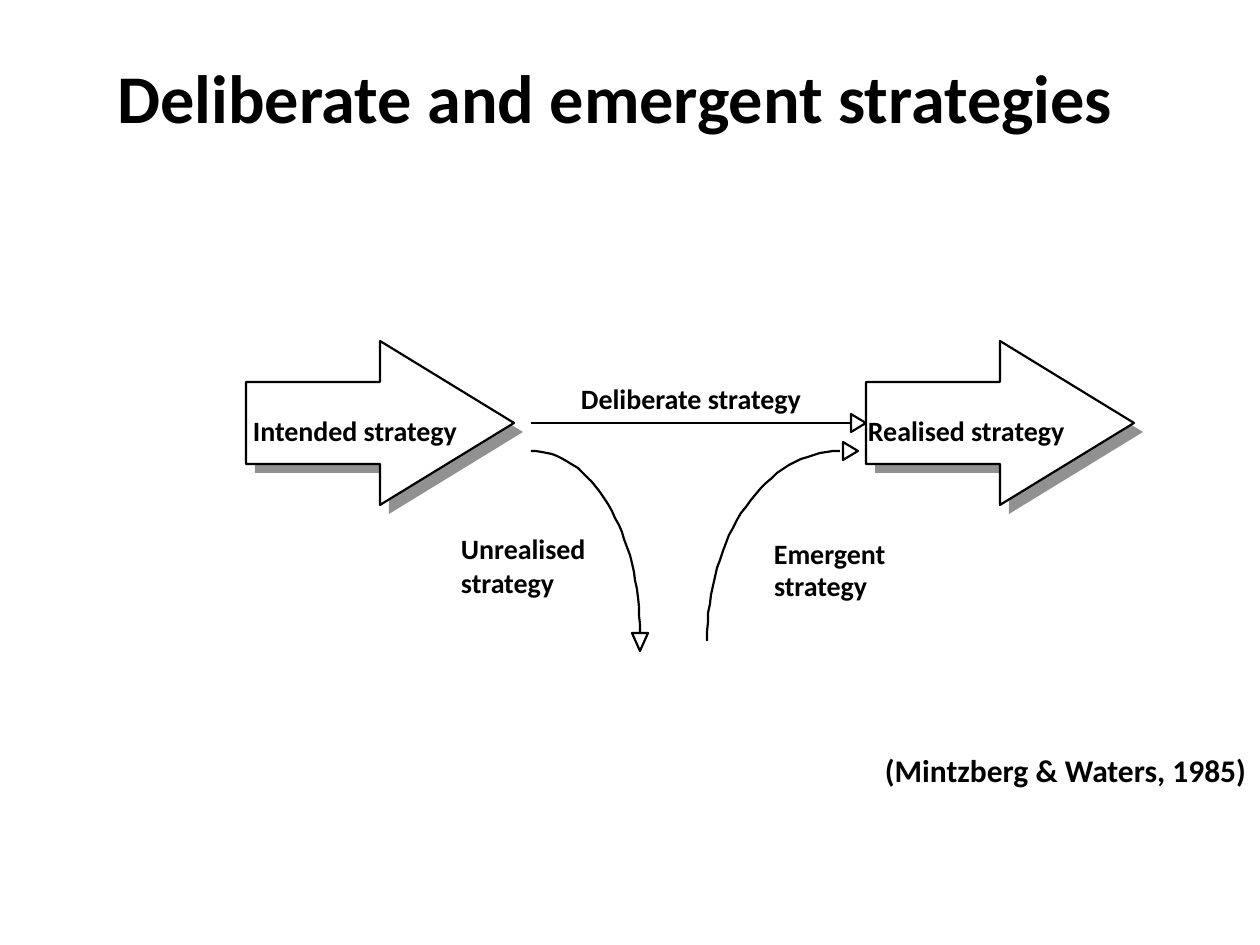
import math
from dataclasses import dataclass

from lxml import etree
from pptx import Presentation
from pptx import util as u
from pptx.dml.color import RGBColor
from pptx.enum import shapes, text
from pptx.oxml.ns import qn

PX = u.Inches(1) / 126
COLORS = {"ink": "000000", "paper": "FFFFFF", "shadow": "919191"}
FONT = "Calibri"
LINE_WIDTH = u.Pt(1.25)
Point = tuple[int, int]


@dataclass
class Label:
    text: str
    left: int
    top: int
    width: int
    height: int = 34
    size: int = 16
    wrap: bool = False


def px(value: float) -> u.Emu:
    return u.Emu(round(value * PX))


def color(name: str) -> RGBColor:
    return RGBColor.from_string(COLORS[name])


def write(frame, content: str, *, size: int, wrap: bool = False,
          align=text.PP_ALIGN.LEFT) -> None:
    frame.margin_left = frame.margin_right = 0
    frame.margin_top = frame.margin_bottom = 0
    frame.auto_size = text.MSO_AUTO_SIZE.NONE
    frame.vertical_anchor = text.MSO_ANCHOR.TOP
    frame.word_wrap = wrap
    paragraph = frame.paragraphs[0]
    paragraph.text = content
    paragraph.alignment = align
    for run in paragraph.runs:
        run.font.name = FONT
        run.font.size = u.Pt(size)
        run.font.bold = True
        run.font.color.rgb = color("ink")


def draw_label(slide, label: Label) -> None:
    box = slide.shapes.add_textbox(
        px(label.left), px(label.top), px(label.width), px(label.height))
    write(box.text_frame, label.text, size=label.size, wrap=label.wrap)


def style(shape, fill: str | None = None, line: str | None = "ink") -> None:
    shape.shadow.inherit = False
    if fill:
        shape.fill.solid()
        shape.fill.fore_color.rgb = color(fill)
    else:
        shape.fill.background()
    if line:
        shape.line.color.rgb = color(line)
        shape.line.width = LINE_WIDTH
    else:
        shape.line.fill.background()


def draw_block_arrow(slide, left: int, top: int) -> None:
    """Outlined arrow over an offset grey one."""
    width, height, offset = 268, 164, 9
    group = slide.shapes.add_group_shape()
    for shift, fill, line in ((offset, "shadow", None), (0, "paper", "ink")):
        arrow = group.shapes.add_shape(
            shapes.MSO_SHAPE.RIGHT_ARROW,
            px(left + shift), px(top + shift), px(width), px(height))
        arrow.adjustments[0] = 0.5
        arrow.adjustments[1] = width / 2 / height
        style(arrow, fill, line)


def draw_path(slide, points: list[tuple[float, float]], *,
              close: bool = False, fill: str | None = None) -> None:
    builder = slide.shapes.build_freeform(*points[0], scale=PX)
    builder.add_line_segments(points[1:], close=close)
    style(builder.convert_to_shape(), fill)


def draw_curve(slide, top_end: Point, bottom_end: Point, steps: int = 32) -> None:
    """Quarter ellipse, level at its top end and upright at its bottom end."""
    (x0, y0), (x1, y1) = top_end, bottom_end
    angles = [math.pi / 2 * step / steps for step in range(steps + 1)]
    draw_path(slide, [(x0 + (x1 - x0) * math.sin(angle),
                       y1 + (y0 - y1) * math.cos(angle)) for angle in angles])


def draw_head(slide, tip: Point, direction: Point) -> None:
    """Hollow triangle pointing along a unit direction."""
    (x, y), (dx, dy) = tip, direction
    length, half = (15, 9) if dx else (18, 8)
    base_x, base_y = x - dx * length, y - dy * length
    draw_path(slide, [tip, (base_x + dy * half, base_y - dx * half),
                      (base_x - dy * half, base_y + dx * half)],
              close=True, fill="paper")


def draw_line(slide, start: Point, end: Point) -> None:
    line = slide.shapes.add_connector(
        shapes.MSO_CONNECTOR.STRAIGHT, *map(px, start + end))
    line.line.color.rgb = color("ink")
    line.line.width = LINE_WIDTH
    etree.SubElement(line._element.spPr, qn("a:effectLst"))


LABELS = [
    Label("Intended strategy", 253, 413, 207),
    Label("Realised strategy", 868, 413, 199),
    Label("Deliberate strategy", 581, 382, 223),
    Label("Unrealised\nstrategy", 461, 532, 144, 68, wrap=True),
    Label("Emergent", 774, 537, 113),
    Label("strategy", 774, 569, 95),
    Label("(Mintzberg & Waters, 1985)", 885, 751, 365, 38, size=18),
]


def main() -> None:
    presentation = Presentation()
    presentation.slide_width, presentation.slide_height = u.Inches(10), u.Inches(7.5)
    slide = presentation.slides.add_slide(presentation.slide_layouts[5])

    # Title
    title = slide.shapes.title
    title.left, title.top, title.width, title.height = map(px, (84, 55, 1062, 83))
    write(title.text_frame, "Deliberate and emergent strategies",
          size=39, wrap=True, align=text.PP_ALIGN.CENTER)

    # Intended and realised strategy
    for left in (246, 866):
        draw_block_arrow(slide, left, 341)

    # Deliberate, unrealised and emergent flows
    right, down = (1, 0), (0, 1)
    draw_line(slide, (531, 423), (850, 423))
    draw_head(slide, (866, 423), right)
    draw_curve(slide, (531, 451), (640, 633))
    draw_head(slide, (640, 651), down)
    draw_curve(slide, (840, 451), (707, 641))
    draw_head(slide, (858, 451), right)

    # Labels and citation
    for label in LABELS:
        draw_label(slide, label)

    presentation.save("out.pptx")


if __name__ == "__main__":
    main()
